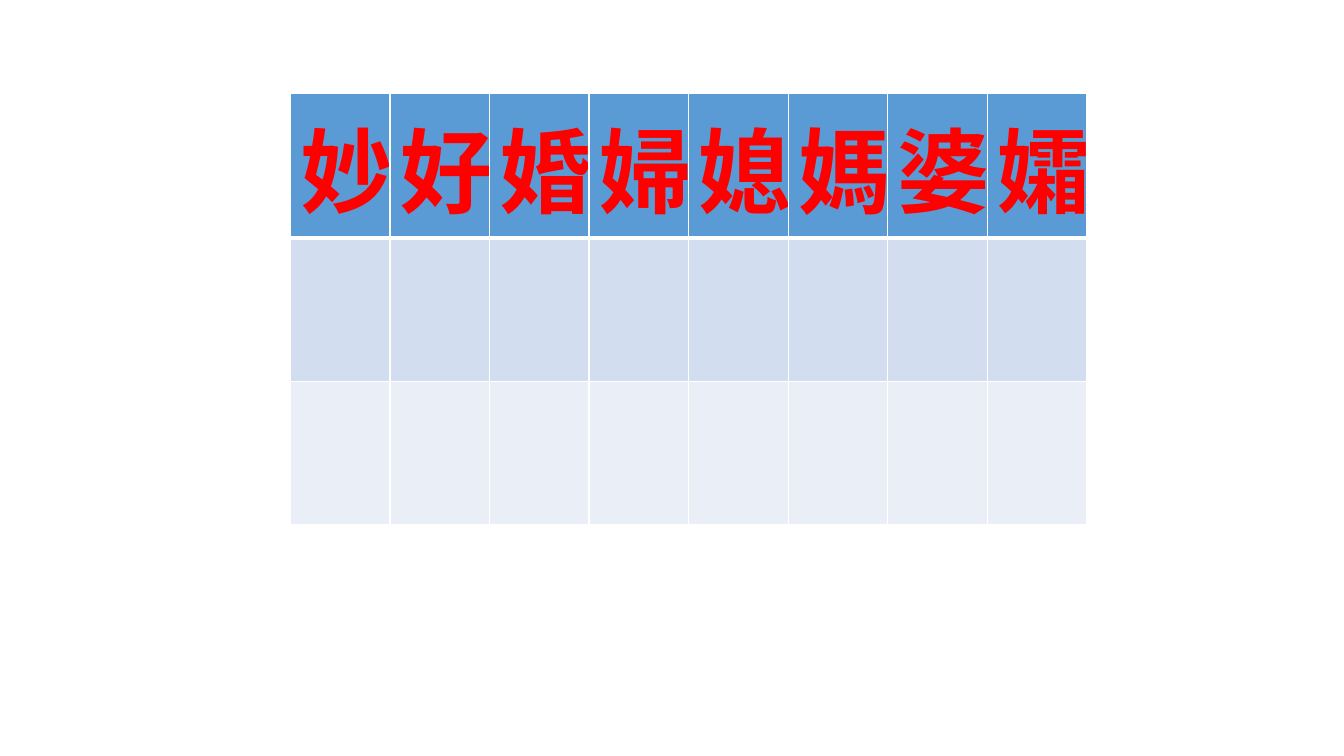
from lxml.etree import SubElement
from pptx import Presentation
from pptx.dml.color import RGBColor
from pptx.enum.text import MSO_ANCHOR as Anchor, PP_ALIGN as Align
from pptx.oxml.ns import qn
from pptx.util import Pt

CHARACTERS = "妙好婚婦媳媽婆孀"
ROW_FILLS = ["5B9BD5", "D2DEEF", "EAEFF7"]


def color(hex_string):
    """Turn a hex string into a colour."""
    return RGBColor.from_string(hex_string)


def set_borders(cell, widths, hex_string):
    """Draw solid cell borders, with widths in points by side."""
    properties = cell._tc.get_or_add_tcPr()
    for side in "LRTB":
        line = SubElement(properties, qn(f"a:ln{side}"), w=str(Pt(widths.get(side, 1))))
        fill = SubElement(line, qn("a:solidFill"))
        SubElement(fill, qn("a:srgbClr"), val=hex_string)


def write_character(cell, character):
    """Put one large character in the middle of a cell."""
    cell.vertical_anchor = Anchor.MIDDLE
    paragraph = cell.text_frame.paragraphs[0]
    paragraph.text = character
    paragraph.alignment = Align.CENTER
    font = paragraph.font
    font.name, font.size, font.bold = "Arial", Pt(66), True
    font.color.rgb = color("FF0000")


def add_character_table(slide, left, top, width, height):
    """Add the table of characters with two empty rows below them."""
    row_count, column_count = len(ROW_FILLS), len(CHARACTERS)
    table = slide.shapes.add_table(
        row_count, column_count, Pt(left), Pt(top), Pt(width), Pt(height)
    ).table
    for column in table.columns:
        column.width = Pt(width / column_count)
    for row_index, row in enumerate(table.rows):
        row.height = Pt(height / row_count)
        heavy_side = {0: {"B": 3}, 1: {"T": 3}}.get(row_index, {})
        for cell in row.cells:
            set_borders(cell, heavy_side, "FFFFFF")
            cell.fill.solid()
            cell.fill.fore_color.rgb = color(ROW_FILLS[row_index])
    for cell, character in zip(table.rows[0].cells, CHARACTERS):
        write_character(cell, character)


def main():
    """Build the slide and save it."""
    presentation = Presentation()
    presentation.slide_width, presentation.slide_height = Pt(960), Pt(540)
    slide = presentation.slides.add_slide(presentation.slide_layouts[6])
    add_character_table(slide, 207.5, 67, 568.8, 307.5)
    presentation.save("out.pptx")


if __name__ == "__main__":
    main()
